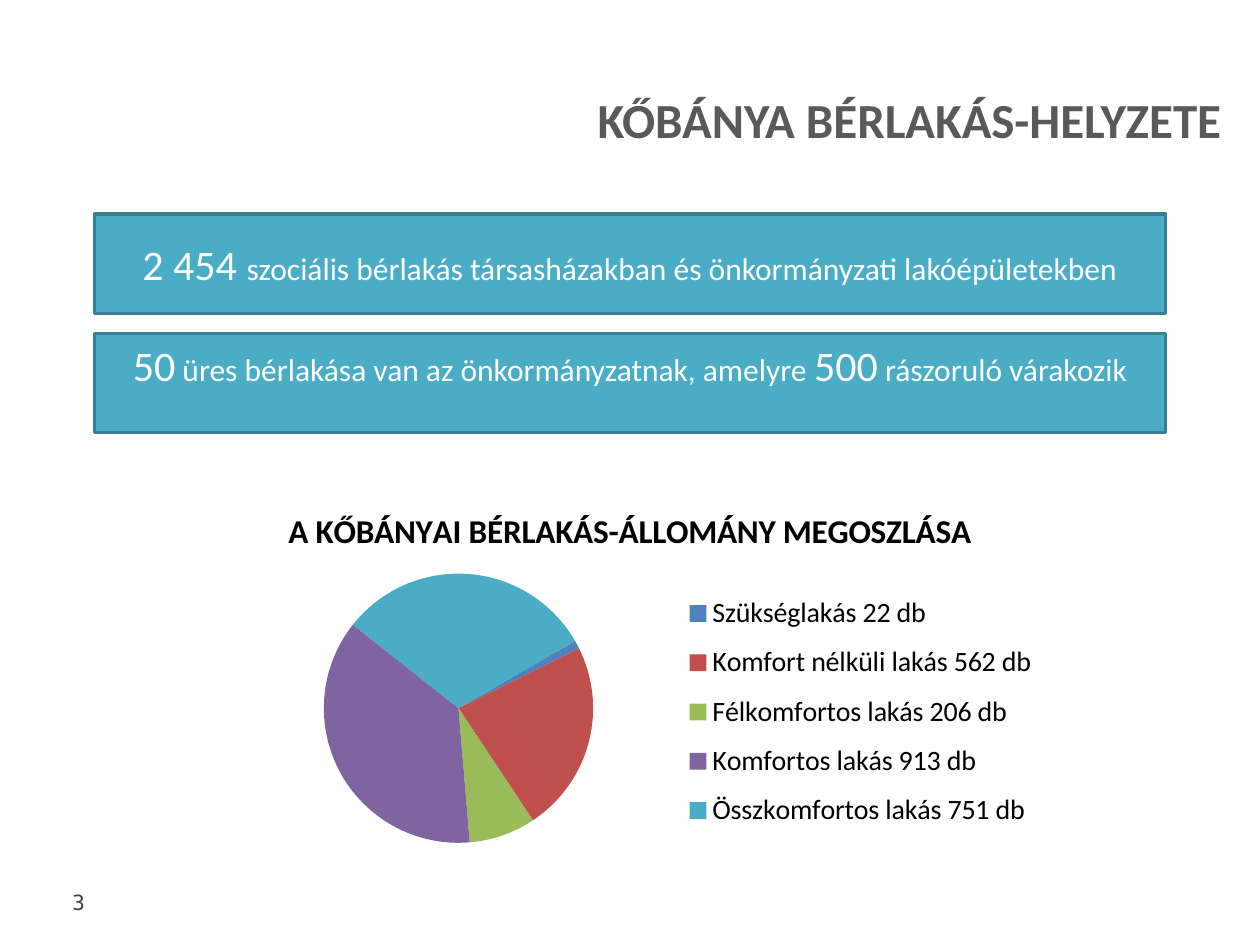
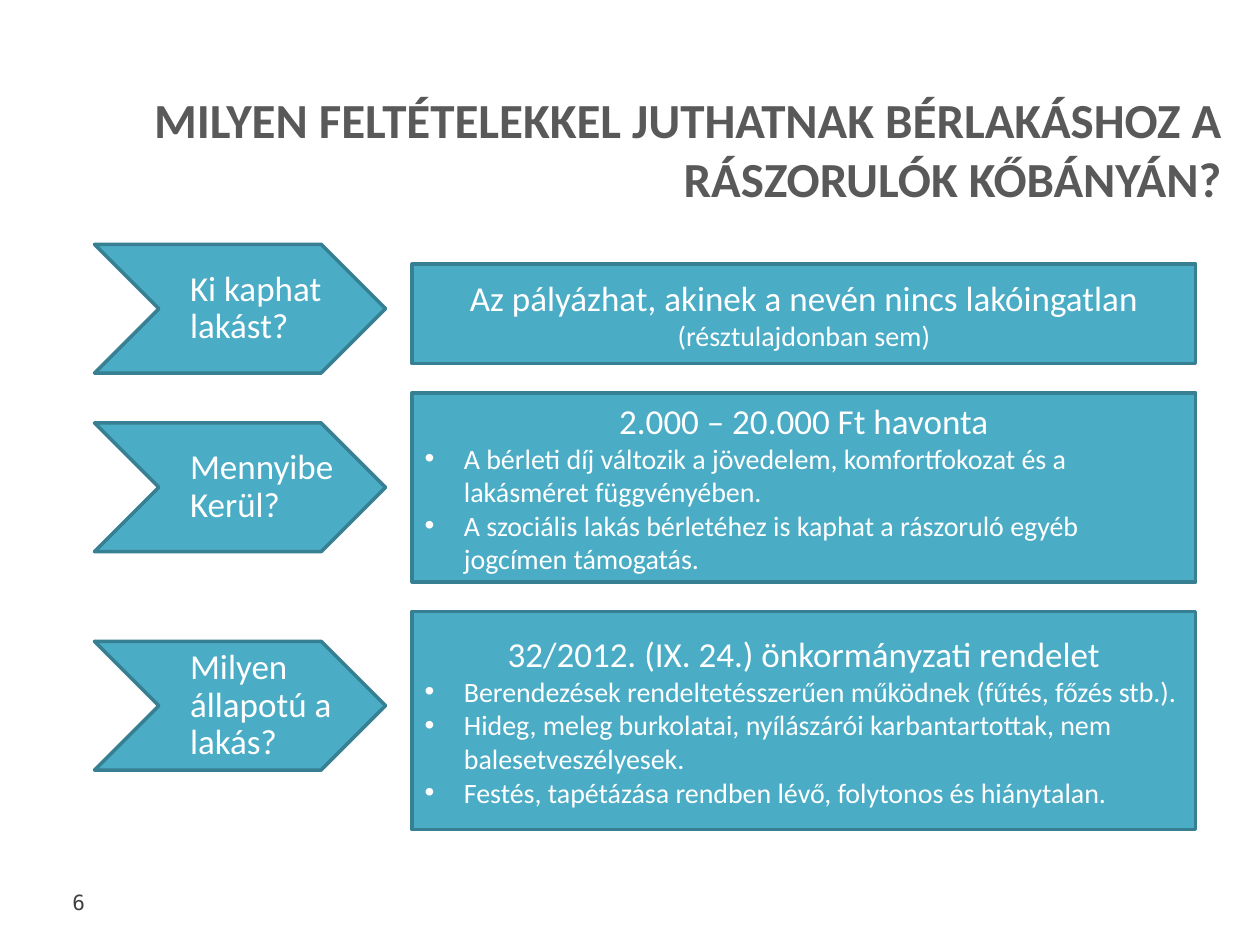
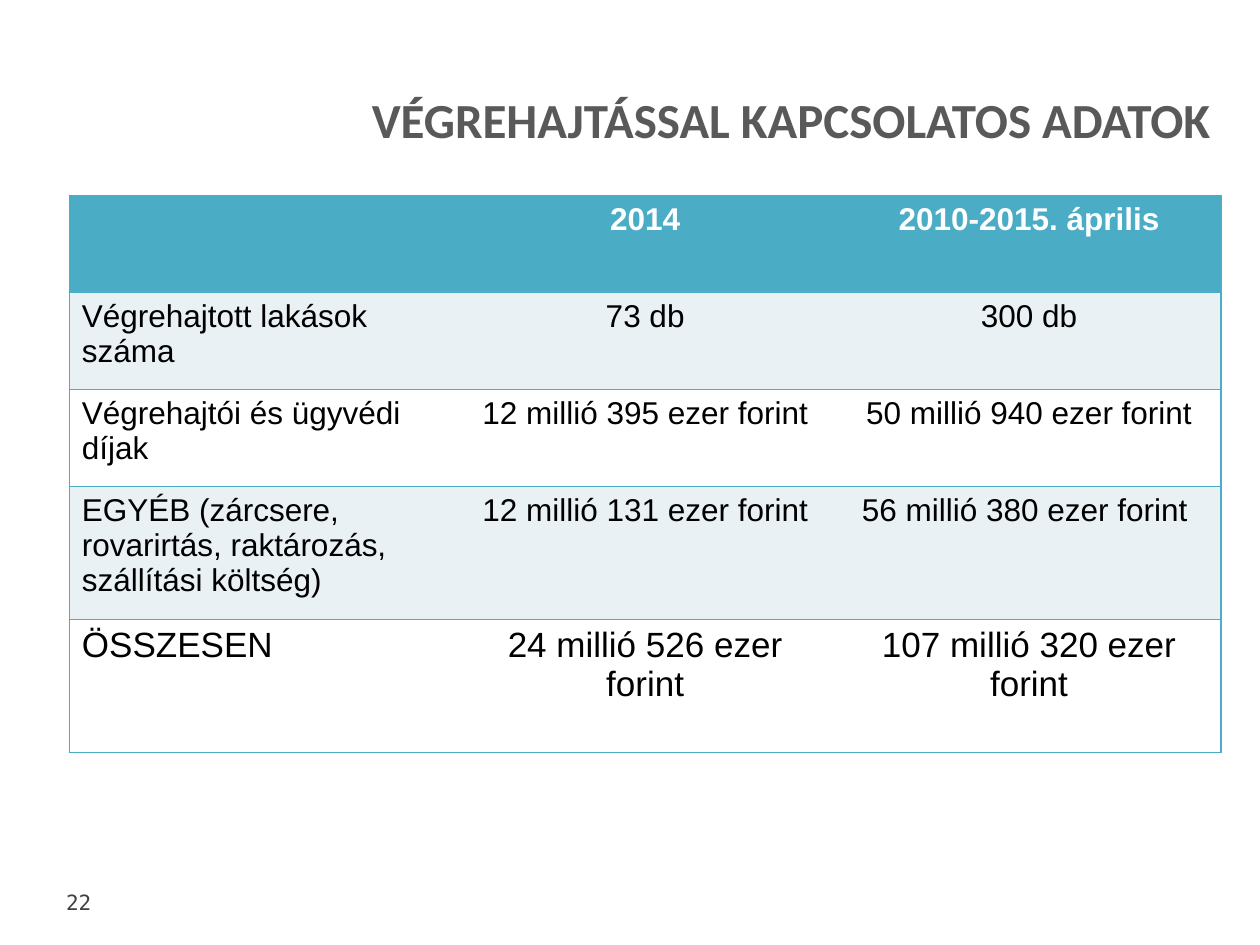
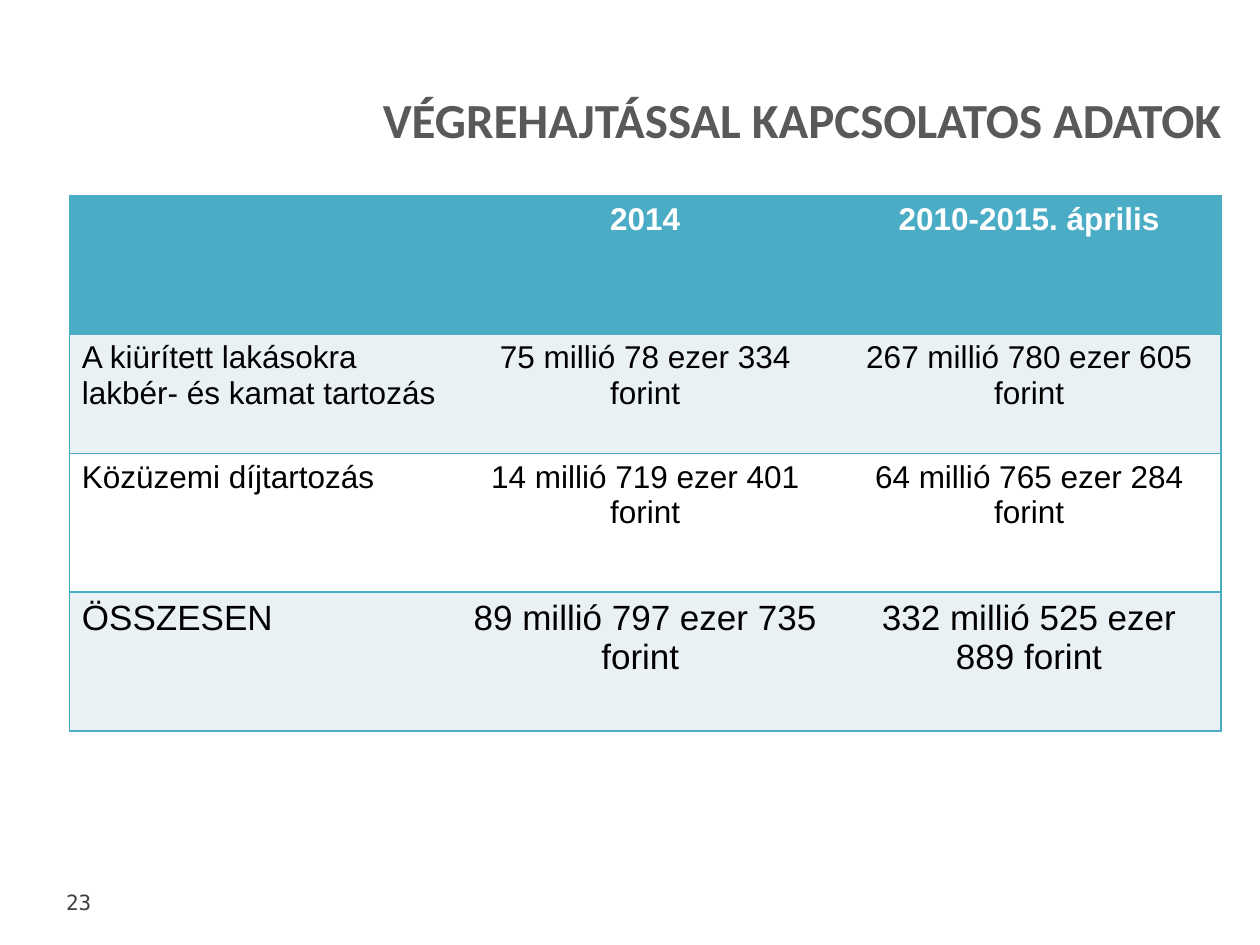
"""Builds four slides on rental housing in Kőbánya."""
from lxml import etree
from pptx import Presentation
from pptx import util as u
from pptx.chart import data as chart_data
from pptx.dml.color import RGBColor
from pptx.enum import chart as charts
from pptx.enum import shapes, text
from pptx.oxml import ns

CENTER = text.PP_ALIGN.CENTER
LEFT = text.PP_ALIGN.LEFT
RIGHT = text.PP_ALIGN.RIGHT


def paint(target, color):
    if hasattr(target, "solid"):
        target.solid()
        target = target.fore_color
    else:
        target = target.color
    target.rgb = RGBColor.from_string(color)


def add_element(parent, tag, **attributes):
    return etree.SubElement(parent, ns.qn(tag), attributes)


def write(frame, runs, *, size=18, color="FFFFFF", bold=False, font="Calibri",
          align=LEFT, spacing=None, bullet=False):
    paragraph = frame.paragraphs[-1]
    if paragraph.runs:
        paragraph = frame.add_paragraph()
    paragraph.alignment = align
    if spacing:
        paragraph.line_spacing = spacing
    if bullet:
        properties = paragraph._p.get_or_add_pPr()
        indent = u.Pt(22.5)
        properties.set("marL", str(indent))
        properties.set("indent", str(-indent))
        add_element(properties, "a:buFont", typeface="Arial")
        add_element(properties, "a:buChar", char="•")
    for part in [(runs, size)] if isinstance(runs, str) else runs:
        run = paragraph.add_run()
        run.text, points = part
        run.font.size = u.Pt(points)
        run.font.name = font
        run.font.bold = bold
        paint(run.font, color)


def make_layout(x, y, width=None, height=None, inner=False):
    layout = etree.Element(ns.qn("c:layout"))
    manual = add_element(layout, "c:manualLayout")
    if inner:
        add_element(manual, "c:layoutTarget", val="inner")
    for tag in ("c:xMode", "c:yMode"):
        add_element(manual, tag, val="edge")
    for tag, value in (("c:x", x), ("c:y", y), ("c:w", width), ("c:h", height)):
        if value is not None:
            add_element(manual, tag, val=str(value))
    return layout


class Deck:
    """Holds the shared style and the current slide."""

    teal = "4BACC6"
    teal_edge = "377F92"
    bands = ("FFFFFF", "E9F1F5")
    slices = ("4F81BD", "C0504D", "9BBB59", "8064A2", "4BACC6")
    left, width = 39.6, 658.2

    def __init__(self):
        self.presentation = Presentation()
        self.presentation.slide_width = u.Pt(720)
        self.presentation.slide_height = u.Pt(540)
        self.slide = None

    def new_slide(self, title, number, title_inset=0):
        layout = self.presentation.slide_layouts[6]
        self.slide = self.presentation.slides.add_slide(layout)
        frame = self.text_box(25.2, 508.3, 39.6, 17.3, inset=0)
        write(frame, str(number), size=12, color="404040",
              font="DejaVu Sans Mono", align=CENTER)
        frame = self.text_box(self.left, 51.1, self.width, 60.5, inset=0)
        frame.margin_right = u.Pt(title_inset)
        write(frame, title, size=28, color="595959", bold=True, align=RIGHT)

    def text_box(self, x, y, width, height, inset=None, holder=None):
        holder = holder or self.slide.shapes
        frame = holder.add_textbox(*map(u.Pt, (x, y, width, height))).text_frame
        frame.word_wrap = True
        if inset is not None:
            frame.margin_left = frame.margin_right = u.Pt(inset)
            frame.margin_top = frame.margin_bottom = u.Pt(inset)
        return frame

    def panel(self, kind, x, y, width, height, holder=None):
        holder = holder or self.slide.shapes
        shape = holder.add_shape(kind, *map(u.Pt, (x, y, width, height)))
        shape.shadow.inherit = False
        paint(shape.fill, self.teal)
        paint(shape.line, self.teal_edge)
        shape.line.width = u.Pt(2)
        shape.text_frame.word_wrap = True
        shape.text_frame.vertical_anchor = text.MSO_ANCHOR.MIDDLE
        return shape.text_frame

    def box(self, x, y, width, height):
        return self.panel(shapes.MSO_SHAPE.RECTANGLE, x, y, width, height)

    def question(self, y, lines):
        holder = self.slide.shapes.add_group_shape().shapes
        self.panel(shapes.MSO_SHAPE.CHEVRON, 54, y, 166.3, 73.6, holder)
        frame = self.text_box(101.5, y + 20.9, 116.6, 31.7, holder=holder)
        frame.vertical_anchor = text.MSO_ANCHOR.MIDDLE
        for line in lines:
            write(frame, line, size=20, spacing=0.9)

    def answer(self, y, height, heading, points=()):
        frame = self.box(235.5, y, 447.8, height)
        write(frame, heading, size=20, align=CENTER)
        for point in points:
            write(frame, point, size=16, bullet=True)

    def borders(self, cell, first, last):
        properties = cell._tc.get_or_add_tcPr()
        for tag, shown in (("a:lnL", first), ("a:lnR", last),
                           ("a:lnT", True), ("a:lnB", True)):
            line = add_element(properties, tag, w=str(u.Pt(1)))
            if shown:
                fill = add_element(line, "a:solidFill")
                add_element(fill, "a:srgbClr", val=self.teal)
            else:
                add_element(line, "a:noFill")

    def table(self, heights, rows):
        columns = len(rows[0])
        table = self.slide.shapes.add_table(
            len(rows), columns, u.Pt(self.left), u.Pt(111.6),
            u.Pt(self.width), u.Pt(sum(heights))).table
        for column in table.columns:
            column.width = u.Pt(self.width / columns)
        for r, (height, row) in enumerate(zip(heights, rows)):
            table.rows[r].height = u.Pt(height)
            header, total = r == 0, r == len(rows) - 1
            for c, content in enumerate(row):
                cell = table.cell(r, c)
                self.borders(cell, c == 0, c == columns - 1)
                paint(cell.fill, self.teal if header else self.bands[r % 2])
                if content:
                    write(cell.text_frame, content, font="Arial", bold=header,
                          size=20 if total else 18,
                          color="FFFFFF" if header else "000000",
                          align=CENTER if c else LEFT)

    def pie(self, x, y, width, height, title, values):
        data = chart_data.CategoryChartData()
        data.categories = list(values)
        data.add_series("Series 1", list(values.values()))
        chart = self.slide.shapes.add_chart(
            charts.XL_CHART_TYPE.PIE, *map(u.Pt, (x, y, width, height)), data).chart
        chart.font.name = "Calibri"
        chart.font.size = u.Pt(18)
        paint(chart.font, "000000")
        chart.has_title = True
        write(chart.chart_title.text_frame, title, size=19, bold=True,
              color="000000", align=CENTER)
        chart.chart_title.include_in_layout = False
        chart.has_legend = True
        chart.legend.position = charts.XL_LEGEND_POSITION.RIGHT
        chart.legend.include_in_layout = False
        chart.legend.font.size = u.Pt(16)
        chart.legend.font.name = "Calibri"
        paint(chart.legend.font, "000000")
        plot = chart.plots[0]
        plot.vary_by_categories = True
        for i, color in enumerate(self.slices):
            paint(plot.series[0].points[i].format.fill, color)

        space = chart._chartSpace
        for old in space.xpath(".//c:layout | .//c:firstSliceAng"):
            old.getparent().remove(old)
        add_element(space.xpath(".//c:pieChart")[0], "c:firstSliceAng", val="60")
        space.xpath(".//c:plotArea")[0].insert(
            0, make_layout(0.02, 0.24, 0.59, 0.71, inner=True))
        space.xpath(".//c:title/c:tx")[0].addnext(make_layout(0.12, 0.05))
        space.xpath(".//c:legend/c:legendPos")[0].addnext(
            make_layout(0.55, 0.26, 0.42, 0.69))


def main():
    deck = Deck()

    deck.new_slide("KŐBÁNYA BÉRLAKÁS-HELYZETE", 3)
    stock = deck.box(54, 122.4, 612, 56.7)
    write(stock, [("2 454 ", 24),
                  ("szociális bérlakás társasházakban és önkormányzati "
                   "lakóépületekben", 18)], align=CENTER)
    waiting = deck.box(54, 190.6, 612, 56.7)
    waiting.vertical_anchor = text.MSO_ANCHOR.TOP
    write(waiting, [("50", 24),
                    (" üres bérlakása van az önkormányzatnak, amelyre ", 18),
                    ("500", 24), (" rászoruló várakozik", 18)], align=CENTER)
    deck.pie(99.4, 275.8, 516.2, 216.7, "A KŐBÁNYAI BÉRLAKÁS-ÁLLOMÁNY MEGOSZLÁSA", {
        "Szükséglakás 22 db": 1,
        "Komfort nélküli lakás 562 db": 23,
        "Félkomfortos lakás 206 db": 8,
        "Komfortos lakás 913 db": 37,
        "Összkomfortos lakás 751 db": 31,
    })

    deck.new_slide("MILYEN FELTÉTELEKKEL JUTHATNAK BÉRLAKÁSHOZ A "
                   "RÁSZORULÓK KŐBÁNYÁN?", 6)
    deck.question(139.6, ["Ki kaphat", "lakást?"])
    deck.answer(151, 56.7, [("Az pályázhat, akinek a nevén nincs lakóingatlan ", 20),
                            ("(résztulajdonban sem)", 16)])
    deck.question(241.7, ["Mennyibe", "Kerül?"])
    deck.answer(224.5, 108, "2.000 – 20.000 Ft havonta", [
        "A bérleti díj változik a jövedelem, komfortfokozat és a "
        "lakásméret függvényében.",
        "A szociális lakás bérletéhez is kaphat a rászoruló egyéb "
        "jogcímen támogatás.",
    ])
    deck.question(366.5, ["Milyen állapotú a lakás?"])
    deck.answer(349.4, 124.6, "32/2012. (IX. 24.) önkormányzati rendelet", [
        "Berendezések rendeltetésszerűen működnek (fűtés, főzés stb.).",
        "Hideg, meleg burkolatai, nyílászárói karbantartottak, nem "
        "balesetveszélyesek.",
        "Festés, tapétázása rendben lévő, folytonos és hiánytalan.",
    ])

    enforcement = "VÉGREHAJTÁSSAL KAPCSOLATOS ADATOK"
    header = ("", "2014", "2010-2015. április")
    deck.new_slide(enforcement, 22, title_inset=6.3)
    deck.table([55.5, 55.5, 55.5, 76, 76], [
        header,
        ("Végrehajtott lakások száma", "73 db", "300 db"),
        ("Végrehajtói és ügyvédi díjak", "12 millió 395 ezer forint",
         "50 millió 940 ezer forint"),
        ("EGYÉB (zárcsere, rovarirtás, raktározás, szállítási költség)",
         "12 millió 131 ezer forint", "56 millió 380 ezer forint "),
        ("ÖSSZESEN", "24 millió 526 ezer forint", "107 millió 320 ezer forint"),
    ])

    deck.new_slide(enforcement, 23)
    deck.table([79.2, 68.4, 79.2, 79.2], [
        header,
        ("A kiürített lakásokra lakbér- és kamat tartozás",
         "75 millió 78 ezer 334 forint", "267 millió 780 ezer 605 forint"),
        ("Közüzemi díjtartozás", "14 millió 719 ezer 401 forint",
         "64 millió 765 ezer 284 forint"),
        ("ÖSSZESEN", "89 millió 797 ezer 735 forint ",
         "332 millió 525 ezer 889 forint"),
    ])

    deck.presentation.save("out.pptx")


if __name__ == "__main__":
    main()
